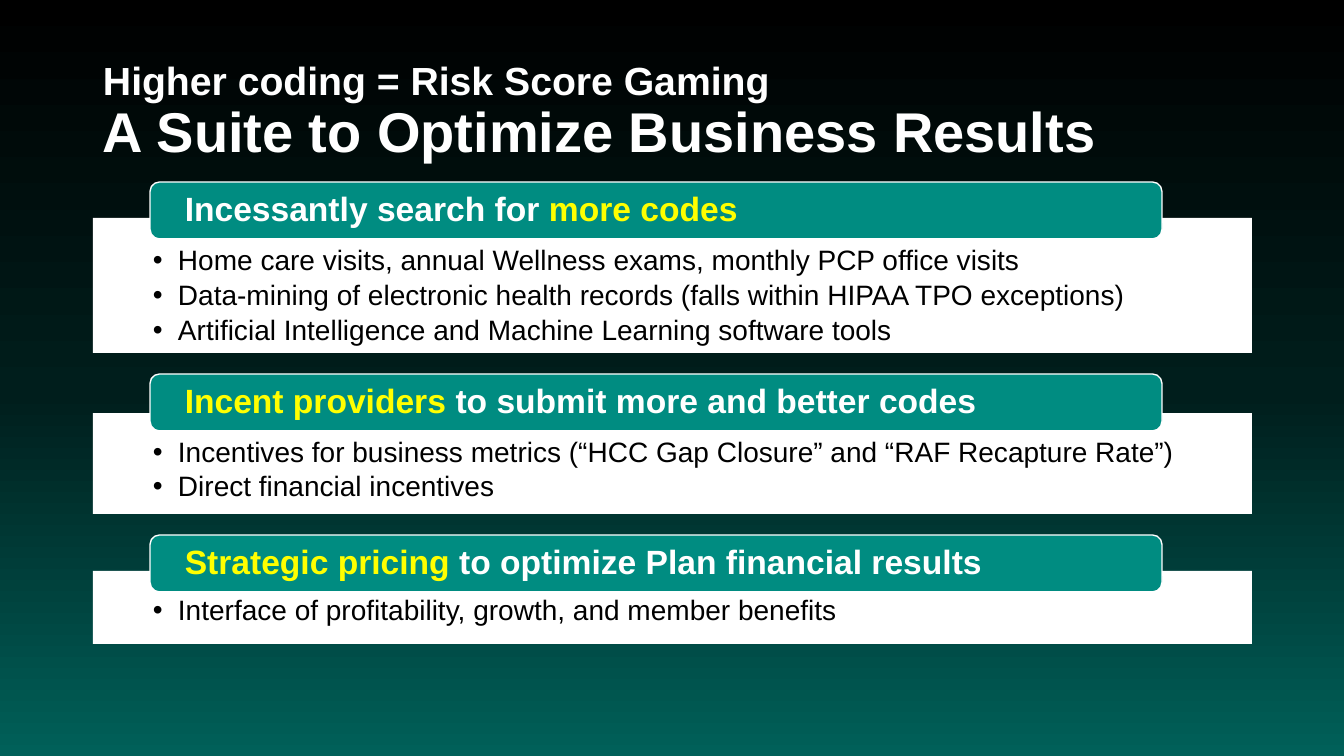
from copy import deepcopy
from dataclasses import dataclass

from lxml.etree import SubElement
from pptx import Presentation
from pptx.dml.color import RGBColor
from pptx.enum.shapes import MSO_SHAPE
from pptx.enum.text import MSO_ANCHOR, PP_ALIGN
from pptx.oxml.ns import qn
from pptx.shapes.autoshape import Shape
from pptx.slide import Slide
from pptx.text.text import TextFrame, _Paragraph
from pptx.util import Emu, Pt

PX_PER_INCH = 100.8
FONT = "Arial"
WHITE = RGBColor(0xFF, 0xFF, 0xFF)
BLACK = RGBColor(0x00, 0x00, 0x00)
YELLOW = RGBColor(0xFF, 0xFF, 0x00)
TEAL = RGBColor(0x00, 0x8C, 0x81)
BACKGROUND_STOPS = [
    (0.0, BLACK),
    (0.52, RGBColor(0x00, 0x1E, 0x1C)),
    (1.0, RGBColor(0x00, 0x60, 0x59)),
]

PANEL_LEFT, PANEL_WIDTH = 93, 1159
BANNER_LEFT, BANNER_WIDTH, BANNER_HEIGHT = 150, 1012, 57
BULLET_INDENT = 25


@dataclass(frozen=True)
class Section:
    banner_top: int
    panel_top: int
    panel_height: int
    heading: list[tuple[str, RGBColor]]
    bullets: list[str]
    line_spacing: float = 0.9
    space_after: float = 3


SECTIONS = [
    Section(182, 218, 135,
            [("Incessantly search for ", WHITE), ("more codes", YELLOW)],
            ["Home care visits, annual Wellness exams, monthly PCP office visits",
             "Data-mining of electronic health records (falls within HIPAA TPO exceptions)",
             "Artificial Intelligence and Machine Learning software tools"],
            line_spacing=1.0, space_after=1),
    Section(374, 413, 101,
            [("Incent providers ", YELLOW), ("to submit more and better codes", WHITE)],
            ["Incentives for business metrics (“HCC Gap Closure” and “RAF Recapture Rate”)",
             "Direct financial incentives"]),
    Section(535, 571, 73,
            [("Strategic pricing ", YELLOW), ("to optimize Plan financial results", WHITE)],
            ["Interface of profitability, growth, and member benefits"]),
]


def px(length: int) -> Emu:
    return Emu(round(length * 914400 / PX_PER_INCH))


def set_frame(frame: TextFrame, anchor: MSO_ANCHOR, left: int, top: int,
              right: int, bottom: int) -> None:
    frame.word_wrap = True
    frame.vertical_anchor = anchor
    frame.margin_left, frame.margin_right = px(left), px(right)
    frame.margin_top, frame.margin_bottom = px(top), px(bottom)


def add_run(paragraph: _Paragraph, text: str, size: int, color: RGBColor,
            bold: bool = False) -> None:
    run = paragraph.add_run()
    run.text = text
    run.font.name = FONT
    run.font.size = Pt(size)
    run.font.bold = bold
    run.font.color.rgb = color


def add_box(slide: Slide, kind: MSO_SHAPE, left: int, top: int, width: int,
            height: int, fill: RGBColor) -> Shape:
    shape = slide.shapes.add_shape(kind, px(left), px(top), px(width), px(height))
    shape.shadow.inherit = False
    shape.fill.solid()
    shape.fill.fore_color.rgb = fill
    return shape


def paint_background(slide: Slide) -> None:
    fill = slide.background.fill
    fill.gradient()
    fill.gradient_angle = 270
    first_stop = slide._element.find(".//" + qn("a:gs"))
    first_stop.addnext(deepcopy(first_stop))
    for stop, (position, color) in zip(fill.gradient_stops, BACKGROUND_STOPS):
        stop.position = position
        stop.color.rgb = color


def add_title(slide: Slide) -> None:
    box = slide.shapes.add_textbox(px(93), px(40), px(1159), px(146))
    set_frame(box.text_frame, MSO_ANCHOR.MIDDLE, 10, 5, 10, 5)
    paragraph = box.text_frame.paragraphs[0]
    paragraph.line_spacing = 0.9
    add_run(paragraph, "Higher coding = Risk Score Gaming", 28, WHITE, bold=True)
    paragraph.add_line_break()
    add_run(paragraph, "A Suite to Optimize Business Results", 40, WHITE, bold=True)


def add_bullet(paragraph: _Paragraph) -> None:
    properties = paragraph._p.get_or_add_pPr()
    properties.set("marL", str(px(BULLET_INDENT)))
    properties.set("indent", str(-px(BULLET_INDENT)))
    SubElement(properties, qn("a:buFont"), typeface=FONT)
    SubElement(properties, qn("a:buChar"), char="•")


def add_panel(slide: Slide, section: Section) -> None:
    panel = add_box(slide, MSO_SHAPE.RECTANGLE, PANEL_LEFT, section.panel_top,
                    PANEL_WIDTH, section.panel_height, WHITE)
    panel.line.fill.background()
    frame = panel.text_frame
    set_frame(frame, MSO_ANCHOR.TOP, 60, 25, 30, 19)
    frame.text = "\n".join(section.bullets)
    for paragraph in frame.paragraphs:
        add_bullet(paragraph)
        paragraph.alignment = PP_ALIGN.LEFT
        paragraph.line_spacing = section.line_spacing
        paragraph.space_after = Pt(section.space_after)
        font = paragraph.runs[0].font
        font.name, font.size = FONT, Pt(20)
        font.color.rgb = BLACK


def add_banner(slide: Slide, section: Section) -> None:
    banner = add_box(slide, MSO_SHAPE.ROUNDED_RECTANGLE, BANNER_LEFT,
                     section.banner_top, BANNER_WIDTH, BANNER_HEIGHT, TEAL)
    banner.line.color.rgb = WHITE
    banner.line.width = Pt(1)
    set_frame(banner.text_frame, MSO_ANCHOR.MIDDLE, 32, 2, 32, 2)
    paragraph = banner.text_frame.paragraphs[0]
    paragraph.alignment = PP_ALIGN.LEFT
    paragraph.line_spacing = 0.9
    for text, color in section.heading:
        add_run(paragraph, text, 24, color, bold=True)


def main() -> None:
    presentation = Presentation()
    presentation.slide_width, presentation.slide_height = px(1344), px(756)
    slide = presentation.slides.add_slide(presentation.slide_layouts[6])
    paint_background(slide)
    add_title(slide)
    # Each banner overlaps the top edge of its panel
    for section in SECTIONS:
        add_panel(slide, section)
        add_banner(slide, section)
    presentation.save("out.pptx")


if __name__ == "__main__":
    main()
